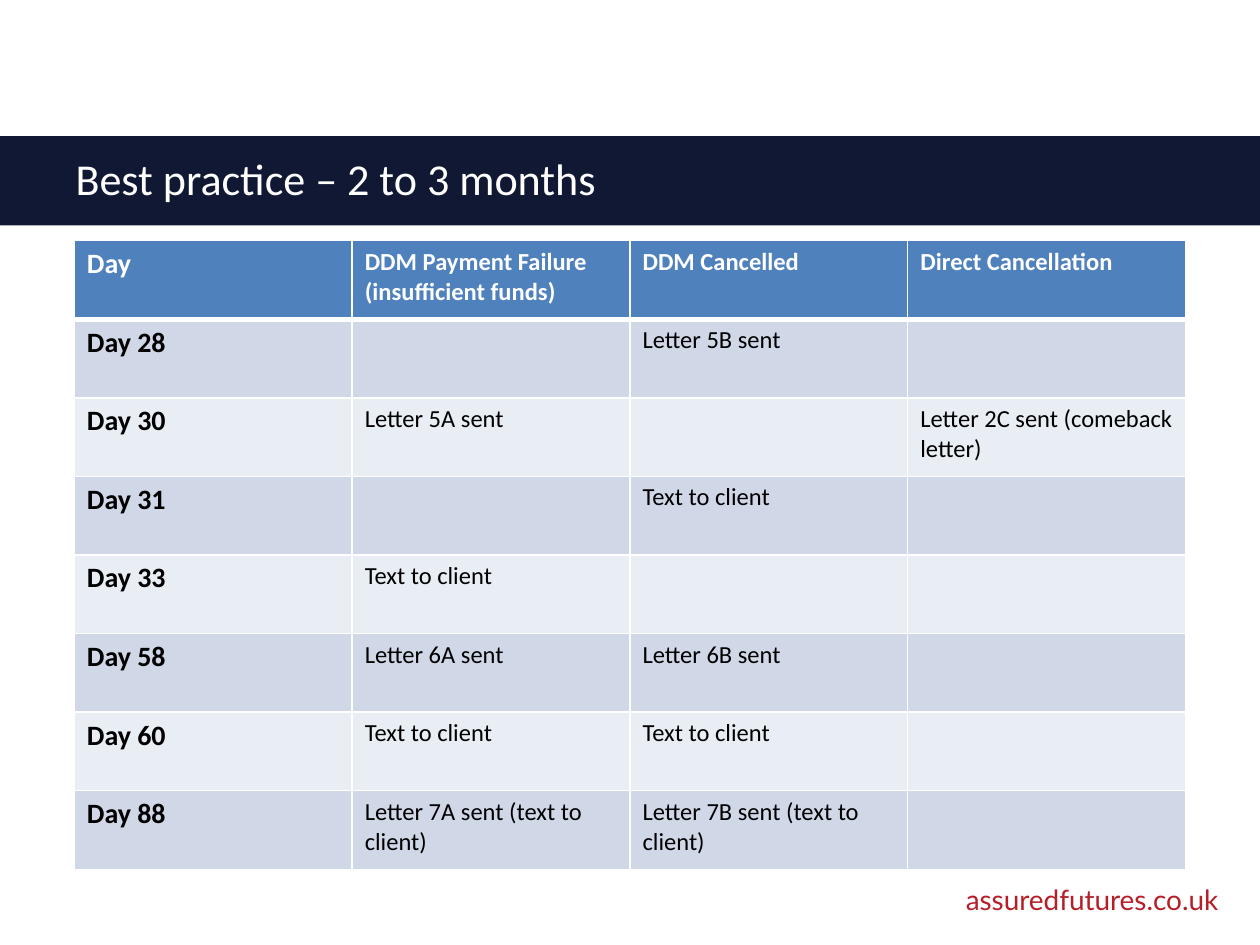
from dataclasses import dataclass

from pptx import Presentation
from pptx.dml.color import RGBColor
from pptx.enum.shapes import MSO_SHAPE
from pptx.enum.text import MSO_ANCHOR, MSO_AUTO_SIZE, PP_ALIGN
from pptx.oxml import parse_xml
from pptx.oxml.ns import nsdecls
from pptx.util import Inches, Pt


@dataclass(frozen=True)
class Theme:
    navy: str = "101833"
    red: str = "B71F28"
    white: str = "FFFFFF"
    black: str = "000000"
    head: str = "4F81BD"
    odd: str = "D0D8E8"
    even: str = "E9EDF4"
    font: str = "Calibri"
    web: str = "Lato"
    title: float = 25.2
    day: float = 16
    note: float = 14


THEME = Theme()

ROWS = [
    ("Day", "DDM Payment Failure (insufficient funds)", "DDM Cancelled",
     "Direct Cancellation"),
    ("Day 28", "", "Letter 5B sent", ""),
    ("Day 30", "Letter 5A sent", "", "Letter 2C sent (comeback letter)"),
    ("Day 31", "", "Text to client", ""),
    ("Day 33", "Text to client", "", ""),
    ("Day 58", "Letter 6A sent", "Letter 6B sent", ""),
    ("Day 60", "Text to client", "Text to client", ""),
    ("Day 88", "Letter 7A sent (text to client)",
     "Letter 7B sent (text to client)", ""),
]


def add_run(para, text, size, color, bold=False, face=THEME.font):
    run = para.add_run()
    run.text = text
    font = run.font
    font.name, font.size, font.bold = face, Pt(size), bold
    font.color.rgb = RGBColor.from_string(color)


def add_edges(cell, base):
    """Draw white cell borders, with the given width at the base."""
    props = cell._tc.get_or_add_tcPr()
    for side, width in (("L", 1), ("R", 1), ("T", 1), ("B", base)):
        props.append(parse_xml(
            f'<a:ln{side} {nsdecls("a")} w="{Pt(width)}"><a:solidFill>'
            f'<a:srgbClr val="{THEME.white}"/></a:solidFill></a:ln{side}>'))


def add_title(slide, x, y, w, h):
    # Band across the slide
    band = slide.shapes.add_shape(
        MSO_SHAPE.RECTANGLE, Inches(x), Inches(y), Inches(w), Inches(h))
    band.shadow.inherit = False
    band.fill.solid()
    band.fill.fore_color.rgb = RGBColor.from_string(THEME.navy)
    band.line.fill.background()

    # Title in front of the band
    title = slide.shapes.title
    slide.shapes.element.append(title.element)
    title.left, title.top = Inches(x + 0.5), Inches(y + 0.11)
    title.width, title.height = Inches(w - 1), Inches(0.45)
    frame = title.text_frame
    frame.auto_size = MSO_AUTO_SIZE.NONE
    frame.vertical_anchor = MSO_ANCHOR.MIDDLE
    para = frame.paragraphs[0]
    para.alignment = PP_ALIGN.LEFT
    add_run(para, "Best practice – 2 to 3 months", THEME.title, THEME.white)


def add_grid(slide, x, y, w, h):
    table = slide.shapes.add_table(
        len(ROWS), len(ROWS[0]),
        Inches(x), Inches(y), Inches(w), Inches(h)).table
    for row, texts in enumerate(ROWS):
        top = row == 0
        fill = THEME.head if top else THEME.odd if row % 2 else THEME.even
        for col, text in enumerate(texts):
            cell = table.cell(row, col)
            add_edges(cell, 3 if top else 1)
            cell.fill.solid()
            cell.fill.fore_color.rgb = RGBColor.from_string(fill)
            if text:
                add_run(cell.text_frame.paragraphs[0], text,
                        THEME.note if col else THEME.day,
                        THEME.white if top else THEME.black,
                        bold=top or col == 0)


def add_foot(slide, x, y, w, h):
    box = slide.shapes.add_textbox(Inches(x), Inches(y), Inches(w), Inches(h))
    frame = box.text_frame
    frame.word_wrap = True
    frame.vertical_anchor = MSO_ANCHOR.MIDDLE
    para = frame.paragraphs[0]
    para.alignment = PP_ALIGN.RIGHT
    para.line_spacing = 0.9
    add_run(para, "assuredfutures.co.uk", THEME.day, THEME.red, face=THEME.web)


def main():
    deck = Presentation()
    deck.slide_width, deck.slide_height = Inches(10), Inches(7.5)
    slide = deck.slides.add_slide(deck.slide_layouts[5])
    add_foot(slide, 7.17, 6.96, 2.6, 0.39)
    add_title(slide, 0, 1.08, 10, 0.71)
    add_grid(slide, 0.59, 1.91, 8.82, 4.99)
    deck.save("out.pptx")


if __name__ == "__main__":
    main()
